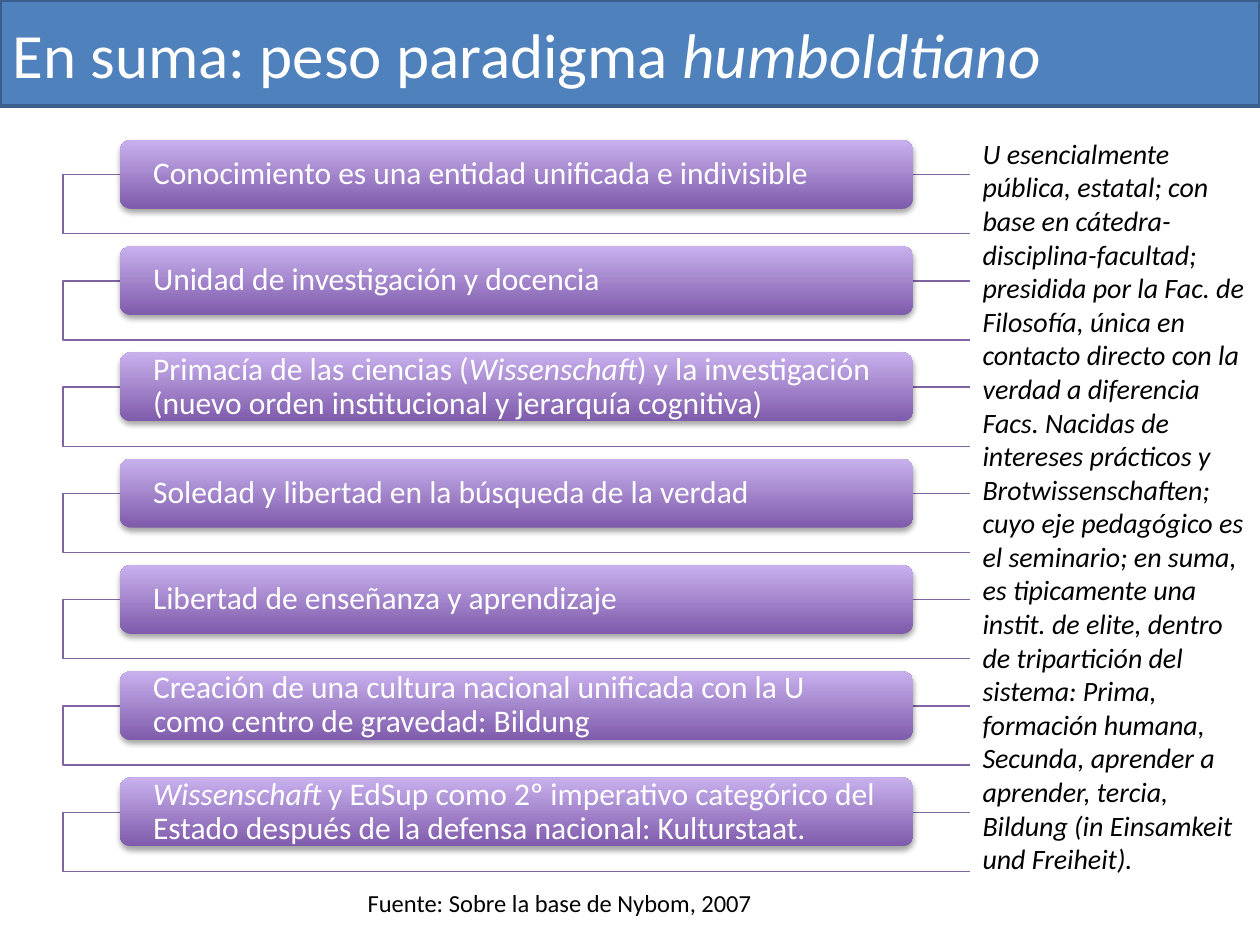
import pptx
import pptx.util
import pptx.dml.color
import pptx.enum.shapes
import pptx.enum.text
import pptx.oxml
import pptx.oxml.ns

Pt = pptx.util.Pt
SHAPE = pptx.enum.shapes.MSO_SHAPE
ANCHOR = pptx.enum.text.MSO_ANCHOR
NS = pptx.oxml.ns.nsdecls("a")
COLORS = {
    "title": "4F81BD", "title_line": "3A5F8C", "white": "FFFFFF", "black": "000000",
    "frame": "8064A2", "bar_dark": "7F5BAB", "bar_light": "C8B0ED",
}


def rgb(name):
    return pptx.dml.color.RGBColor.from_string(COLORS[name])


def write(sp, text, size, color="white", anchor=ANCHOR.TOP, wrap=True,
          inset=(7.2, 3.6), spacing=None):
    """Write one paragraph; parts between asterisks are italic."""
    tf = sp.text_frame
    tf.word_wrap = wrap
    tf.vertical_anchor = anchor
    tf.margin_left = tf.margin_right = Pt(inset[0])
    tf.margin_top = tf.margin_bottom = Pt(inset[1])
    p = tf.paragraphs[0]
    p.alignment = pptx.enum.text.PP_ALIGN.LEFT
    p.line_spacing = spacing
    for i, part in enumerate(text.split("*")):
        if part:
            r = p.add_run()
            r.text = part
            r.font.name = "Calibri"
            r.font.size = Pt(size)
            r.font.italic = i % 2 == 1
            r.font.color.rgb = rgb(color)


prs = pptx.Presentation()
prs.slide_width, prs.slide_height = Pt(720), Pt(540)
s = prs.slides.add_slide(prs.slide_layouts[6])

# Title band
sp = s.shapes.add_shape(SHAPE.RECTANGLE, Pt(0), Pt(0), Pt(720), Pt(60.5))
sp.shadow.inherit = False
sp.fill.solid()
sp.fill.fore_color.rgb = rgb("title")
sp.line.color.rgb = rgb("title_line")
sp.line.width = Pt(2)
write(sp, "En suma: peso paradigma *humboldtiano*", 36, anchor=ANCHOR.MIDDLE)

# Principles: a frame with a bar over its top edge, at equal steps
principles = [
    "Conocimiento es una entidad unificada e indivisible",
    "Unidad de investigación y docencia",
    "Primacía de las ciencias (*Wissenschaft*) y la investigación "
    "(nuevo orden institucional y jerarquía cognitiva)",
    "Soledad y libertad en la búsqueda de la verdad",
    "Libertad de enseñanza y aprendizaje",
    "Creación de una cultura nacional unificada con la U como centro de gravedad: Bildung",
    "*Wissenschaft* y EdSup como 2º imperativo categórico del Estado "
    "después de la defensa nacional: Kulturstaat.",
]
TOP, STEP = 80, 60.72
for i, text in enumerate(principles):
    y = TOP + i * STEP

    sp = s.shapes.add_shape(SHAPE.RECTANGLE, Pt(36), Pt(y + 19.8), Pt(648), Pt(33.8))
    sp.shadow.inherit = False
    sp.fill.solid()
    sp.fill.fore_color.rgb = rgb("white")
    fill_color = sp.fill._xPr.find(".//" + pptx.oxml.ns.qn("a:srgbClr"))
    fill_color.append(pptx.oxml.parse_xml(f'<a:alpha {NS} val="90000"/>'))
    sp.line.color.rgb = rgb("frame")
    sp.line.width = Pt(0.75)

    sp = s.shapes.add_shape(SHAPE.ROUNDED_RECTANGLE, Pt(68.4), Pt(y), Pt(453.6), Pt(39.4))
    sp.fill.gradient()
    sp.fill.gradient_angle = 90
    for stop, name in zip(sp.fill.gradient_stops, ("bar_dark", "bar_light")):
        stop.color.rgb = rgb(name)
    sp.line.fill.background()
    sp._element.spPr.append(pptx.oxml.parse_xml(
        f'<a:effectLst {NS}><a:outerShdw blurRad="{Pt(3.1)}" dist="{Pt(1.8)}" '
        f'dir="5400000" rotWithShape="0"><a:srgbClr val="{COLORS["black"]}">'
        '<a:alpha val="35000"/></a:srgbClr></a:outerShdw></a:effectLst>'))
    write(sp, text, 18, anchor=ANCHOR.MIDDLE, inset=(17.2, 0), spacing=0.9)

# Source of the content
sp = s.shapes.add_textbox(Pt(203), Pt(504), Pt(236), Pt(24.5))
write(sp, "Fuente: Sobre la base de Nybom, 2007", 14, "black", wrap=False)

# Side comment, covering the right ends of the frames
sp = s.shapes.add_textbox(Pt(554.4), Pt(74.4), Pt(165.6), Pt(433.4))
sp.fill.solid()
sp.fill.fore_color.rgb = rgb("white")
write(sp, "*U esencialmente pública, estatal; con base en cátedra-disciplina-facultad; "
      "presidida por la Fac. de Filosofía, única en contacto directo con la verdad "
      "a diferencia Facs. Nacidas de intereses prácticos y Brotwissenschaften; cuyo eje "
      "pedagógico es el seminario; en suma, es tipicamente una instit. de elite, dentro "
      "de tripartición del sistema: Prima, formación humana, Secunda, aprender a "
      "aprender, tercia, Bildung (in Einsamkeit und Freiheit).*", 16, "black")

prs.save("out.pptx")
